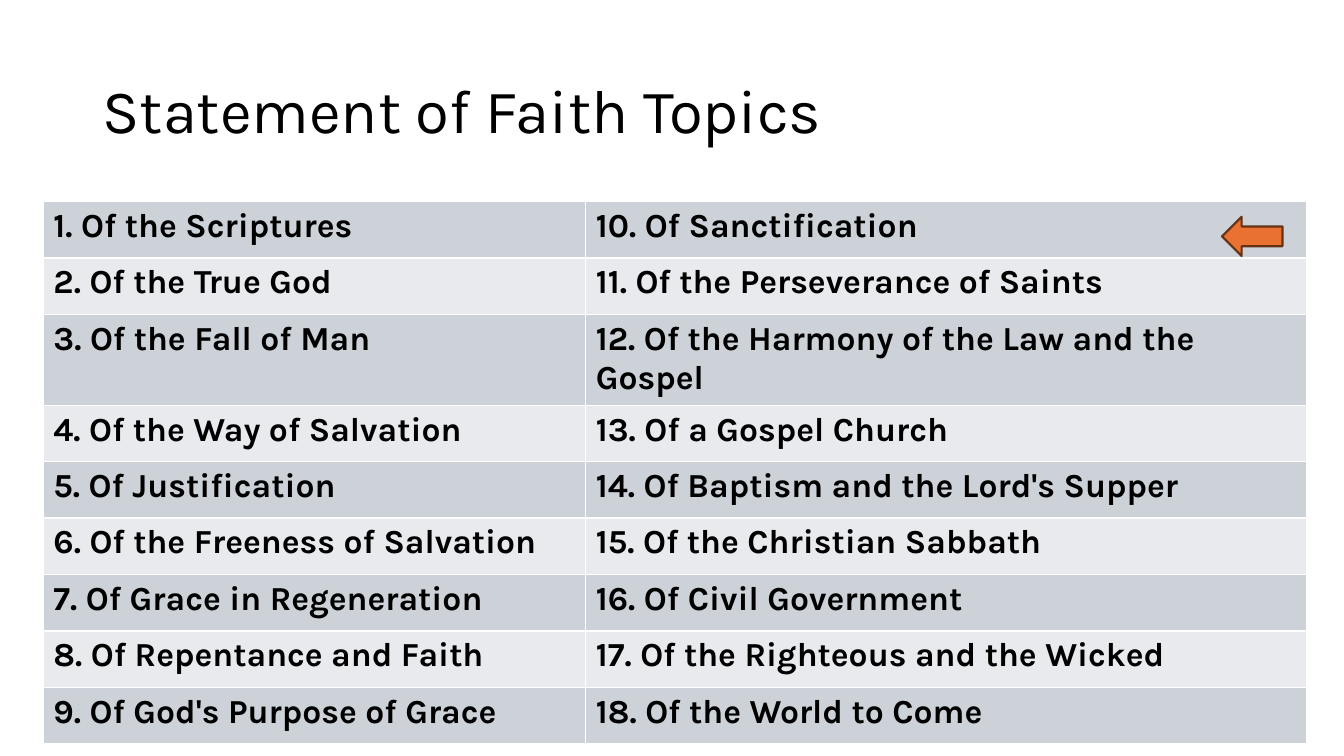
from dataclasses import dataclass

from lxml import etree
from pptx import Presentation
from pptx import util as u
from pptx.dml.color import RGBColor
from pptx.enum import shapes, text
from pptx.oxml import ns

BLACK = RGBColor(0x00, 0x00, 0x00)
WHITE = RGBColor(0xFF, 0xFF, 0xFF)
DARK = RGBColor(0xCC, 0xD2, 0xD8)
LIGHT = RGBColor(0xE8, 0xEA, 0xED)
ORANGE = RGBColor(0xE9, 0x71, 0x32)
BROWN = RGBColor(0x66, 0x32, 0x16)

TITLE_FONT = {"name": "Karla", "size": u.Pt(44)}
TOPIC_FONT = {"name": "Karla", "size": u.Pt(24), "bold": True}


@dataclass
class Row:
    left: str
    right: str
    height: float = 0.56


ROWS = [
    Row("Of the Scriptures", "Of Sanctification"),
    Row("Of the True God", "Of the Perseverance of Saints"),
    Row("Of the Fall of Man", "Of the Harmony of the Law and the Gospel", 0.62),
    Row("Of the Way of Salvation", "Of a Gospel Church"),
    Row("Of Justification", "Of Baptism and the Lord's Supper"),
    Row("Of the Freeness of Salvation", "Of the Christian Sabbath"),
    Row("Of Grace in Regeneration", "Of Civil Government"),
    Row("Of Repentance and Faith", "Of the Righteous and the Wicked"),
    Row("Of God's Purpose of Grace", "Of the World to Come"),
]
WIDTHS = (5.38, 7.15)


def write(frame, words: str, style: dict) -> None:
    """Put one styled run in the frame."""
    run = frame.paragraphs[0].add_run()
    run.text = words
    for key, value in style.items():
        setattr(run.font, key, value)
    run.font.color.rgb = BLACK


def edge(cell) -> None:
    """Draw thin white lines on all four sides; call before filling."""
    props = cell._tc.get_or_add_tcPr()
    for side in ("lnL", "lnR", "lnT", "lnB"):
        line = etree.SubElement(props, ns.qn(f"a:{side}"), w=str(u.Pt(1)))
        fill = etree.SubElement(line, ns.qn("a:solidFill"))
        etree.SubElement(fill, ns.qn("a:srgbClr"), val=str(WHITE))


def add_title(slide) -> None:
    box = slide.shapes.add_textbox(
        u.Inches(0.92), u.Inches(0.4), u.Inches(11.5), u.Inches(1.45))
    frame = box.text_frame
    frame.word_wrap = True
    frame.vertical_anchor = text.MSO_ANCHOR.MIDDLE
    frame.paragraphs[0].line_spacing = 0.9
    write(frame, "Statement of Faith Topics", TITLE_FONT)


def add_topics(slide) -> None:
    height = sum(row.height for row in ROWS)
    table = slide.shapes.add_table(
        len(ROWS), len(WIDTHS), u.Inches(0.43), u.Inches(2),
        u.Inches(sum(WIDTHS)), u.Inches(height)).table
    table.first_row = False
    for col, width in zip(table.columns, WIDTHS):
        col.width = u.Inches(width)
    for r, row in enumerate(ROWS):
        table.rows[r].height = u.Inches(row.height)
        for c, topic in enumerate((row.left, row.right)):
            cell = table.cell(r, c)
            number = c * len(ROWS) + r + 1
            write(cell.text_frame, f"{number}. {topic}", TOPIC_FONT)
            edge(cell)
            cell.fill.solid()
            cell.fill.fore_color.rgb = LIGHT if r % 2 else DARK


def add_arrow(slide) -> None:
    arrow = slide.shapes.add_shape(
        shapes.MSO_SHAPE.LEFT_ARROW,
        u.Inches(12.12), u.Inches(2.15), u.Inches(0.6), u.Inches(0.39))
    arrow.shadow.inherit = False
    arrow.fill.solid()
    arrow.fill.fore_color.rgb = ORANGE
    arrow.line.color.rgb = BROWN
    arrow.line.width = u.Pt(1.5)


def main() -> None:
    deck = Presentation()
    deck.slide_width = u.Inches(13.33)
    deck.slide_height = u.Inches(7.5)
    slide = deck.slides.add_slide(deck.slide_layouts[6])
    add_title(slide)
    add_topics(slide)
    add_arrow(slide)
    deck.save("out.pptx")


if __name__ == "__main__":
    main()
